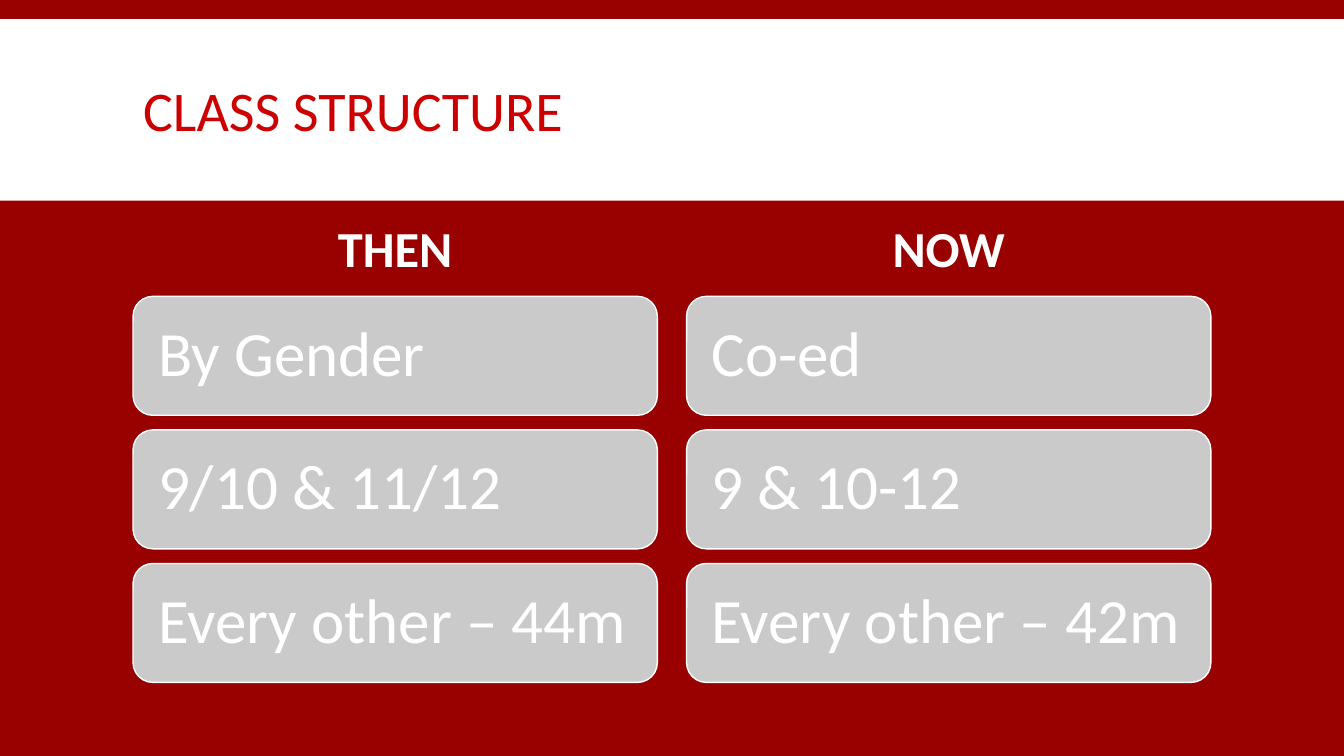
from dataclasses import dataclass

from pptx import Presentation
from pptx import util as u
from pptx.dml.color import RGBColor
from pptx.enum import shapes, text


@dataclass(frozen=True)
class Theme:
    font: str = "Calibri"
    red: str = "990000"
    title_red: str = "CC0000"
    white: str = "FFFFFF"
    card_grey: str = "CACACA"
    title_size: int = 40
    heading_size: int = 36
    card_size: int = 45


THEME = Theme()
COLUMNS = [
    ("THEN", ["By Gender", "9/10 & 11/12", "Every other – 44m"]),
    ("NOW", ["Co-ed", "9 & 10-12", "Every other – 42m"]),
]
HEADING_IDS = [1, 3]  # heading placeholders of the comparison layout
LEFT, COLUMN_WIDTH, COLUMN_STEP = 1.32, 5.2, 5.49
CARD_TOP, CARD_HEIGHT, CARD_STEP = 2.94, 1.18, 1.325


def set_values(target, values):
    for name, value in values.items():
        setattr(target, name, value)


def place(shape, left, top, width, height):
    sides = dict(left=left, top=top, width=width, height=height)
    set_values(shape, {name: u.Inches(side) for name, side in sides.items()})


def write(shape, words, size, color, bold=False, frame_format=None, **para_format):
    frame = shape.text_frame
    set_values(frame, {
        "word_wrap": True,
        "auto_size": text.MSO_AUTO_SIZE.NONE,
        "vertical_anchor": text.MSO_ANCHOR.MIDDLE,
        **(frame_format or {}),
    })
    para = frame.paragraphs[0]
    set_values(para, {"space_before": u.Pt(0), "line_spacing": 0.9, **para_format})
    span = para.add_run()
    span.text = words
    set_values(span.font, {"name": THEME.font, "size": u.Pt(size), "bold": bold})
    span.font.color.rgb = RGBColor.from_string(color)


def add_filled(page, kind, fill, left, top, width, height):
    shape = page.shapes.add_shape(
        kind, *map(u.Inches, (left, top, width, height)))
    shape.shadow.inherit = False
    shape.fill.solid()
    shape.fill.fore_color.rgb = RGBColor.from_string(fill)
    return shape


def add_title_band(page):
    band = add_filled(page, shapes.MSO_SHAPE.RECTANGLE, THEME.white,
                      0, 0.19, 13.33, 1.8)
    band.line.fill.background()
    # Send the band behind the placeholders
    page.shapes._spTree.insert(2, band._element)


def add_card(page, words, left, top):
    card = add_filled(page, shapes.MSO_SHAPE.ROUNDED_RECTANGLE, THEME.card_grey,
                      left, top, COLUMN_WIDTH, CARD_HEIGHT)
    card.line.color.rgb = RGBColor.from_string(THEME.white)
    card.line.width = u.Pt(1)
    sides = ("left", "right", "top", "bottom")
    write(card, words, THEME.card_size, THEME.white,
          frame_format={f"margin_{side}": u.Inches(0.19) for side in sides},
          alignment=text.PP_ALIGN.LEFT)


def add_column(page, heading_box, heading, cards, left):
    place(heading_box, left, 2.09, COLUMN_WIDTH, 0.81)
    write(heading_box, heading, THEME.heading_size, THEME.white, bold=True,
          alignment=text.PP_ALIGN.CENTER, space_after=u.Pt(2))
    for row, words in enumerate(cards):
        add_card(page, words, left, CARD_TOP + row * CARD_STEP)


def main():
    deck = Presentation()
    set_values(deck, {"slide_width": u.Inches(13.33), "slide_height": u.Inches(7.5)})
    page = deck.slides.add_slide(deck.slide_layouts.get_by_name("Comparison"))
    page.background.fill.solid()
    page.background.fill.fore_color.rgb = RGBColor.from_string(THEME.red)

    # Title on its white band
    add_title_band(page)
    title = page.shapes.title
    place(title, LEFT, 0.31, 10.7, 1.65)
    write(title, "CLASS STRUCTURE", THEME.title_size, THEME.title_red,
          alignment=text.PP_ALIGN.LEFT, line_spacing=0.85)

    # Two columns of cards under their headings
    boxes = {box.placeholder_format.idx: box for box in page.placeholders}
    for number, (heading, cards) in enumerate(COLUMNS):
        add_column(page, boxes[HEADING_IDS[number]], heading, cards,
                   LEFT + number * COLUMN_STEP)

    # Remove the placeholders that stay empty
    for box in list(page.placeholders):
        if not box.text_frame.text:
            box._element.getparent().remove(box._element)

    deck.save("out.pptx")


if __name__ == "__main__":
    main()
